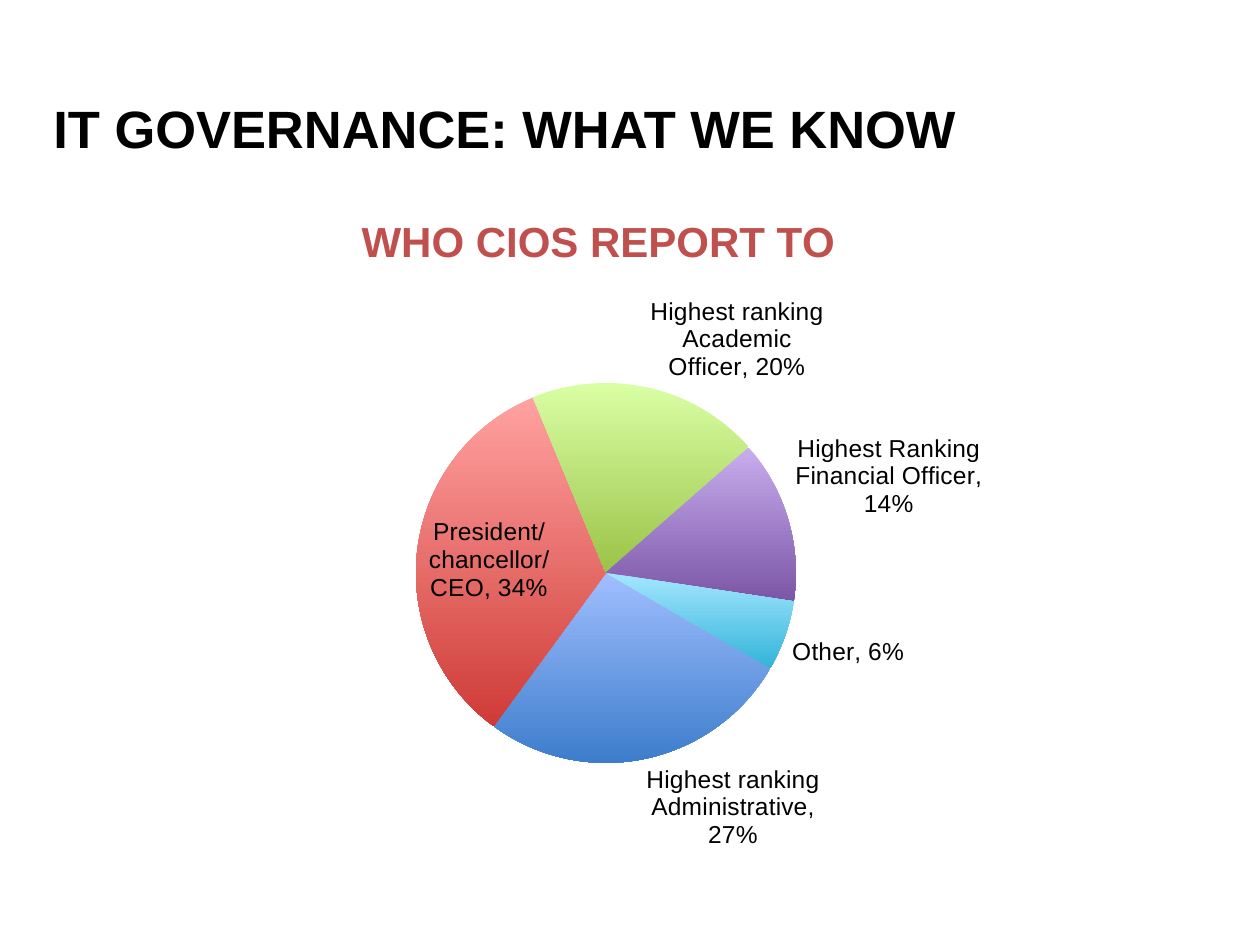
"""Build the slide on IT governance with a pie of whom CIOs report to."""
from lxml import etree
from pptx import Presentation
from pptx.chart.data import CategoryChartData
from pptx.dml.color import RGBColor
from pptx.enum import chart as kinds, text
from pptx.oxml import ns
from pptx.util import Pt

BLACK = RGBColor(0, 0, 0)
BRICK = RGBColor(0xC0, 0x50, 0x4D)
FONT = "Arial"
HEADING = "IT GOVERNANCE: WHAT WE KNOW"
CHART_TITLE = "WHO CIOS REPORT TO"
SLICES = [
    ("Highest ranking Administrative", 27, RGBColor(0xA0, 0xBE, 0xFF), RGBColor(0x3D, 0x7D, 0xCB)),
    ("President/chancellor/CEO", 34, RGBColor(0xFF, 0xA2, 0xA0), RGBColor(0xCF, 0x3B, 0x37)),
    ("Highest ranking Academic Officer", 20, RGBColor(0xD9, 0xFF, 0xA4), RGBColor(0x9B, 0xC3, 0x48)),
    ("Highest Ranking Financial Officer", 14, RGBColor(0xC8, 0xAD, 0xEE), RGBColor(0x7B, 0x56, 0xA6)),
    ("Other", 6, RGBColor(0xA4, 0xE6, 0xFF), RGBColor(0x33, 0xB4, 0xD9)),
]
START_ANGLE = 120
HEADING_AREA = (41, 63, 1188, 123)
CHART_AREA = (128, 186, 941, 682)
PIE_AREA = (416, 383, 380, 380)
SCALE = 914400 / 126


def emu(area):
    return [round(length * SCALE) for length in area]


def style(font, size, color, bold=False):
    font.name, font.size, font.bold = FONT, Pt(size), bold
    font.color.rgb = color


def add_heading(page):
    box = page.shapes.add_textbox(*emu(HEADING_AREA))
    frame = box.text_frame
    frame.word_wrap = True
    frame.vertical_anchor = text.MSO_ANCHOR.MIDDLE
    frame.text = HEADING
    frame.paragraphs[0].line_spacing = 1.1
    style(frame.paragraphs[0].runs[0].font, 30, BLACK, True)


def place_pie(chart):
    plot_area = chart.plots[0]._element.getparent()
    layout = plot_area.find(ns.qn("c:layout"))
    if layout is None:
        layout = etree.Element(ns.qn("c:layout"))
        plot_area.insert(0, layout)
    manual = etree.SubElement(layout, ns.qn("c:manualLayout"))
    left, top, width, height = CHART_AREA
    x, y, w, h = PIE_AREA
    settings = [
        ("layoutTarget", "inner"), ("xMode", "edge"), ("yMode", "edge"),
        ("x", (x - left) / width), ("y", (y - top) / height),
        ("w", w / width), ("h", h / height),
    ]
    for name, value in settings:
        etree.SubElement(manual, ns.qn(f"c:{name}")).set("val", str(value))


def separate_with_comma(labels):
    separator = etree.Element(ns.qn("c:separator"))
    separator.text = ", "
    flags = [ns.qn(f"c:{name}") for name in ("showPercent", "showBubbleSize")]
    last = [child for child in labels._element if child.tag in flags][-1]
    last.addnext(separator)


def add_pie(page):
    data = CategoryChartData()
    data.categories = [name for name, *_ in SLICES]
    data.add_series("Series 1", [value for _, value, *_ in SLICES])
    chart = page.shapes.add_chart(kinds.XL_CHART_TYPE.PIE, *emu(CHART_AREA), data).chart
    chart.has_legend = False
    style(chart.font, 18, BLACK)
    chart.font.name = "Calibri"
    title = chart.chart_title.text_frame
    title.text = CHART_TITLE
    style(title.paragraphs[0].runs[0].font, 24, BRICK, True)

    plot = chart.plots[0]
    plot.vary_by_categories = True
    angle = plot._element.find(ns.qn("c:firstSliceAng"))
    if angle is None:
        angle = etree.SubElement(plot._element, ns.qn("c:firstSliceAng"))
    angle.set("val", str(START_ANGLE))
    series = plot.series[0]
    for index, (_, _, light, dark) in enumerate(SLICES):
        fill = series.points[index].format.fill
        fill.gradient()
        fill.gradient_angle = 270
        for stop, color in zip(fill.gradient_stops, (light, dark)):
            stop.color.rgb = color

    labels = series.data_labels
    labels.show_value = False
    labels.show_category_name = labels.show_percentage = True
    labels.number_format, labels.number_format_is_linked = "0%", False
    labels.position = kinds.XL_LABEL_POSITION.BEST_FIT
    style(labels.font, 14, BLACK)
    separate_with_comma(labels)
    place_pie(chart)


def main():
    deck = Presentation()
    deck.slide_width, deck.slide_height = emu((1260, 945))
    page = deck.slides.add_slide(deck.slide_layouts[6])
    add_heading(page)
    add_pie(page)
    deck.save("out.pptx")


if __name__ == "__main__":
    main()
